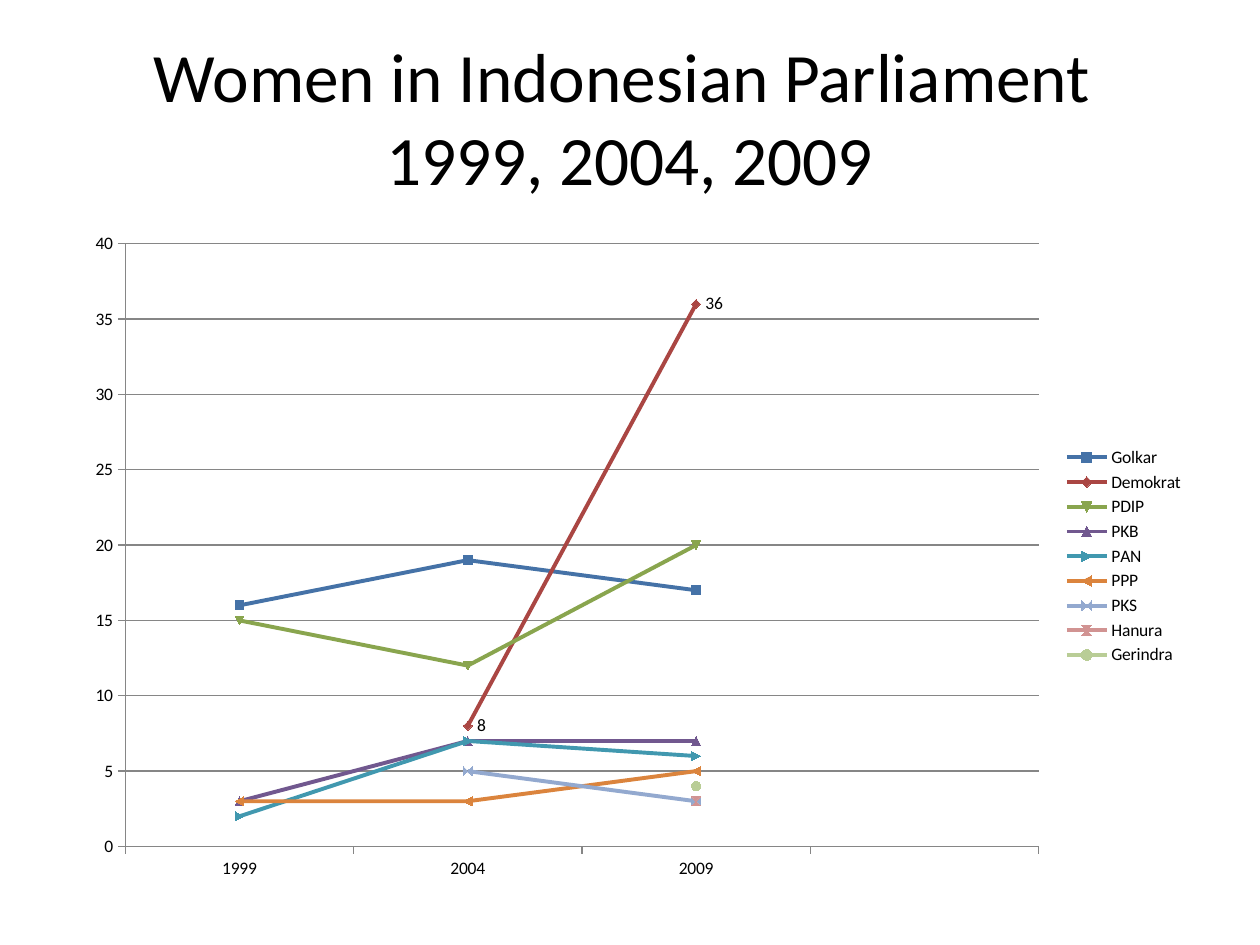
from dataclasses import dataclass
from typing import Optional

from pptx import Presentation
from pptx.chart.data import CategoryChartData
from pptx.dml.color import RGBColor
from pptx.enum.chart import XL_CHART_TYPE, XL_LABEL_POSITION, XL_LEGEND_POSITION, XL_TICK_MARK
from pptx.enum.text import MSO_ANCHOR, PP_ALIGN
from pptx.util import Pt

LINES = XL_CHART_TYPE.LINE_MARKERS
BESIDE = XL_LABEL_POSITION.RIGHT
RIGHT = XL_LEGEND_POSITION.RIGHT
OUT, NONE = XL_TICK_MARK.OUTSIDE, XL_TICK_MARK.NONE
MIDDLE, CENTER = MSO_ANCHOR.MIDDLE, PP_ALIGN.CENTER
FACE, INK, GRID = "Calibri", "000000", "868686"


@dataclass
class Box:
    left: float
    top: float
    width: float
    height: float

    def place(self) -> tuple:
        return Pt(self.left), Pt(self.top), Pt(self.width), Pt(self.height)


@dataclass
class Party:
    name: str
    seats: tuple[Optional[int], ...]
    color: str
    labels: bool = False


YEARS = ("1999", "2004", "2009", "")
PARTIES = (
    Party("Golkar", (16, 19, 17, None), "4572A7"),
    Party("Demokrat", (None, 8, 36, None), "AA4643", True),
    Party("PDIP", (15, 12, 20, None), "89A54E"),
    Party("PKB", (3, 7, 7, None), "71588F"),
    Party("PAN", (2, 7, 6, None), "4198AF"),
    Party("PPP", (3, 3, 5, None), "DB843D"),
    Party("PKS", (None, 5, 3, None), "93A9CF"),
    Party("Hanura", (None, None, 3, None), "D19392"),
    Party("Gerindra", (None, None, 4, None), "B9CD96"),
)


def paint(target, color: str) -> None:
    target.rgb = RGBColor.from_string(color)


def set_font(font, size: float) -> None:
    font.name = FACE
    font.size = Pt(size)
    paint(font.color, INK)


def set_line(line, color: str, width: float) -> None:
    line.width = Pt(width)
    paint(line.color, color)


def set_axis(axis) -> None:
    axis.major_tick_mark = OUT
    axis.minor_tick_mark = NONE
    set_line(axis.format.line, GRID, 0.75)


def add_title(slide, text: str, box: Box) -> None:
    frame = slide.shapes.add_textbox(*box.place()).text_frame
    frame.word_wrap = True
    frame.vertical_anchor = MIDDLE
    frame.text = text
    para = frame.paragraphs[0]
    para.alignment = CENTER
    for run in para.runs:
        set_font(run.font, 39.6)


def style_plot(plot, party: Party, series) -> None:
    series.smooth = False
    set_line(series.format.line, party.color, 2.25)
    mark = series.marker
    mark.size = 5
    mark.format.fill.solid()
    paint(mark.format.fill.fore_color, party.color)
    set_line(mark.format.line, party.color, 0.75)
    if party.labels:
        labels = series.data_labels
        labels.show_value = True
        labels.position = BESIDE
        set_font(labels.font, 10)


def add_chart(slide, box: Box) -> None:
    data = CategoryChartData()
    data.categories = YEARS
    for party in PARTIES:
        data.add_series(party.name, party.seats)
    chart = slide.shapes.add_chart(LINES, *box.place(), data).chart
    chart.has_title = False
    set_font(chart.font, 10)
    chart.has_legend = True
    chart.legend.position = RIGHT
    chart.legend.include_in_layout = False
    set_axis(chart.category_axis)
    scale = chart.value_axis
    set_axis(scale)
    scale.minimum_scale, scale.maximum_scale, scale.major_unit = 0, 40, 5
    scale.has_major_gridlines = True
    set_line(scale.major_gridlines.format.line, GRID, 0.75)
    plot = chart.plots[0]
    plot.vary_by_categories = False
    for party, series in zip(PARTIES, plot.series):
        style_plot(plot, party, series)


def main() -> None:
    deck = Presentation()
    deck.slide_width, deck.slide_height = Pt(720), Pt(540)
    slide = deck.slides.add_slide(deck.slide_layouts[6])
    add_title(slide, "Women in Indonesian Parliament \v1999, 2004, 2009", Box(36, 21.6, 648, 90))
    add_chart(slide, Box(41.76, 126, 642.24, 383.76))
    deck.save("out.pptx")


if __name__ == "__main__":
    main()
